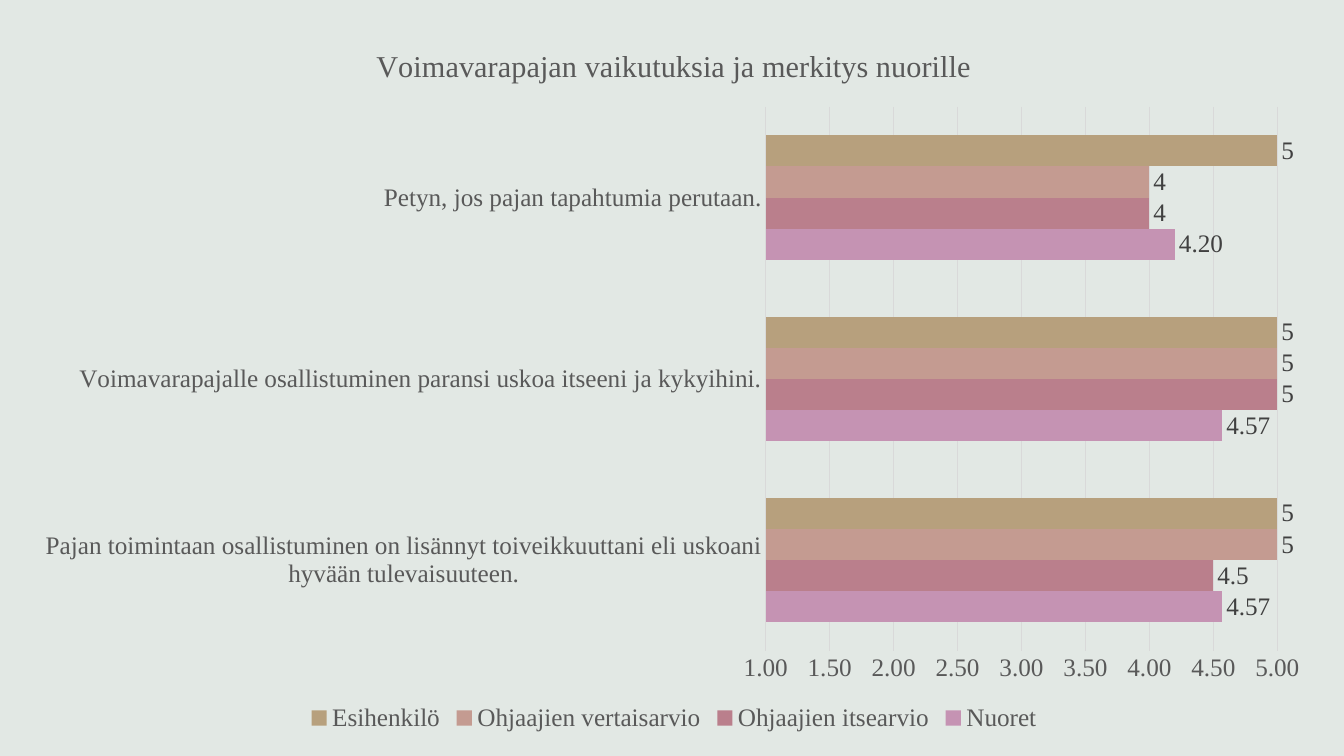
from dataclasses import dataclass

from lxml import etree
from pptx import Presentation
from pptx.chart.data import CategoryChartData
from pptx.dml.color import RGBColor as RGB
from pptx.enum.chart import XL_CHART_TYPE as ChartType
from pptx.enum.chart import XL_LABEL_POSITION as LabelPos
from pptx.enum.chart import XL_LEGEND_POSITION as LegendPos
from pptx.enum.chart import XL_TICK_MARK as TickMark
from pptx.oxml.ns import qn
from pptx.util import Inches, Pt


@dataclass(frozen=True)
class Theme:
    face: str = "Times New Roman"
    background: str = "E2E8E4"
    text: str = "595959"
    label: str = "404040"
    rule: str = "D9D9D9"
    body_size: float = 18
    title_size: float = 21.6
    rule_width: float = 0.75


TITLE = "Voimavarapajan vaikutuksia ja merkitys nuorille"
STATEMENTS = [
    "Pajan toimintaan osallistuminen on lisännyt toiveikkuuttani eli uskoani hyvään tulevaisuuteen.",
    "Voimavarapajalle osallistuminen paransi uskoa itseeni ja kykyihini.",
    "Petyn, jos pajan tapahtumia perutaan.",
]
# name, values, bar colour, number format
RATERS = [
    ("Nuoret", (4.57, 4.57, 4.2), "C593B3", "0.00"),
    ("Ohjaajien itsearvio", (4.5, 5, 4), "BA7F8C", "General"),
    ("Ohjaajien vertaisarvio", (5, 5, 4), "C49B91", "General"),
    ("Esihenkilö", (5, 5, 5), "B7A07D", "General"),
]


class SlideBuilder:
    def __init__(self, prs, theme):
        self.prs, self.theme = prs, theme
        self.s = prs.slides.add_slide(prs.slide_layouts[6])
        fill = self.s.background.fill
        fill.solid()
        fill.fore_color.rgb = RGB.from_string(theme.background)

    def style_font(self, font, color, size=None):
        font.name = self.theme.face
        font.size = Pt(size or self.theme.body_size)
        font.bold = False
        font.color.rgb = RGB.from_string(color)

    def style_rule(self, line):
        line.color.rgb = RGB.from_string(self.theme.rule)
        line.width = Pt(self.theme.rule_width)

    def bar_chart(self, box, title, categories, series):
        """Add a clustered bar chart; box is in shares of the slide's size."""
        data = CategoryChartData()
        data.categories = categories
        for name, values, _, fmt in series:
            data.add_series(name, values, fmt)
        w, h = self.prs.slide_width, self.prs.slide_height
        frame = [int(share * side) for share, side in zip(box, (w, h, w, h))]
        chart = self.s.shapes.add_chart(ChartType.BAR_CLUSTERED, *frame, data).chart
        self.style_font(chart.font, self.theme.text)
        self.chart_title(chart, title)
        self.legend(chart)
        self.axes(chart)
        plot = chart.plots[0]
        plot.gap_width, plot.overlap = 182, 0
        plot.vary_by_categories = False
        for bars, (_, _, color, fmt) in zip(plot.series, series):
            self.bars(bars, color, fmt)
        return chart

    def chart_title(self, chart, text):
        chart.has_title = True
        chart.chart_title.include_in_layout = False
        p = chart.chart_title.text_frame.paragraphs[0]
        p.text = text
        self.style_font(p.font, self.theme.text, self.theme.title_size)

    def legend(self, chart):
        chart.has_legend = True
        chart.legend.position = LegendPos.BOTTOM
        chart.legend.include_in_layout = False
        self.style_font(chart.legend.font, self.theme.text)

    def axes(self, chart):
        cat, val = chart.category_axis, chart.value_axis
        for axis in (cat, val):
            axis.major_tick_mark = axis.minor_tick_mark = TickMark.NONE
            self.style_font(axis.tick_labels.font, self.theme.text)
        self.style_rule(cat.format.line)
        val.format.line.fill.background()
        val.minimum_scale, val.maximum_scale, val.major_unit = 1, 5, 0.5
        val.has_major_gridlines = True
        self.style_rule(val.major_gridlines.format.line)
        val.tick_labels.number_format = "0.00"
        val.tick_labels.number_format_is_linked = False

    def bars(self, bars, color, fmt):
        bars.format.fill.solid()
        bars.format.fill.fore_color.rgb = RGB.from_string(color)
        labels = bars.data_labels
        labels.show_value = True
        labels.position = LabelPos.OUTSIDE_END
        labels.number_format = fmt
        labels.number_format_is_linked = False
        self.style_font(labels.font, self.theme.label)

    def place_plot(self, chart, x, y, w, h):
        """Fix the inner plot area, in shares of the chart's size."""
        area = chart.element.find(".//" + qn("c:plotArea"))
        layout = area.find(qn("c:layout"))
        if layout is None:
            layout = etree.Element(qn("c:layout"))
            area.insert(0, layout)
        manual = etree.SubElement(layout, qn("c:manualLayout"))
        settings = dict(layoutTarget="inner", xMode="edge", yMode="edge", x=x, y=y, w=w, h=h)
        for tag, value in settings.items():
            etree.SubElement(manual, qn("c:" + tag)).set("val", str(value))


def main():
    prs = Presentation()
    prs.slide_width, prs.slide_height = Inches(13.33), Inches(7.5)
    slide = SlideBuilder(prs, Theme())
    box = (0.18 / 13.33, 0.21 / 7.5, 13.01 / 13.33, 7.1 / 7.5)
    chart = slide.bar_chart(box, TITLE, STATEMENTS, RATERS)
    slide.place_plot(chart, 0.57, 0.12, 0.39, 0.76)
    prs.save("out.pptx")


if __name__ == "__main__":
    main()
